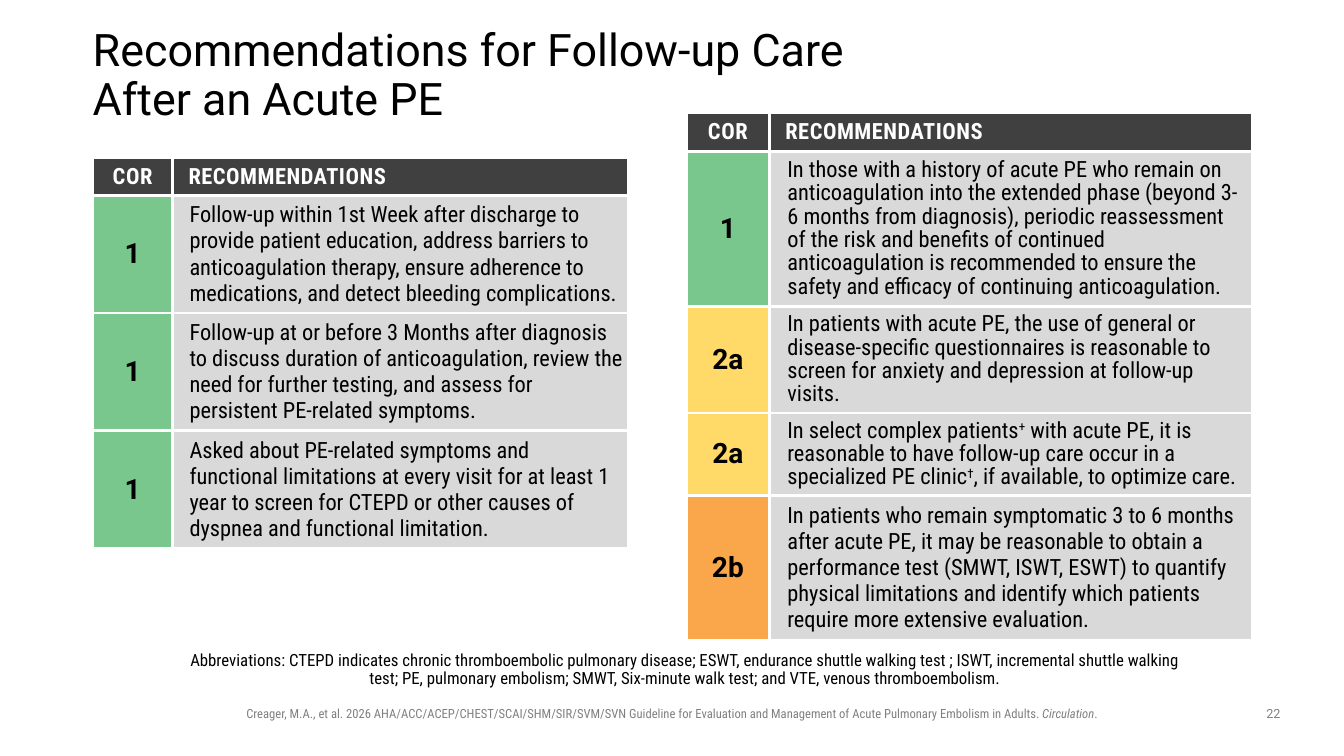
from dataclasses import dataclass

from lxml.etree import fromstring
from pptx import Presentation
from pptx.dml.color import RGBColor
from pptx.enum.text import MSO_ANCHOR as Anchor, PP_ALIGN as Align
from pptx.oxml.ns import nsdecls
from pptx.util import Inches, Pt


@dataclass(frozen=True)
class Theme:
    heading: str = "Roboto"
    body: str = "Roboto Condensed"
    black: str = "000000"
    white: str = "FFFFFF"
    gray: str = "808080"
    header: str = "404040"
    panel: str = "D9D9D9"
    title_size: int = 32
    class_size: int = 20
    text_size: int = 16
    note_size: int = 12
    footer_size: int = 9
    border: float = 2.25


T = Theme()
CLASS_COLORS = {"1": "79C78D", "2a": "FFDA68", "2b": "FAA74B"}

EARLY_VISITS = [
    ("1", 1.13, None, ["Follow-up within 1st Week after discharge to provide patient education, "
                       "address barriers to anticoagulation therapy, ensure adherence to "
                       "medications, and detect bleeding complications."]),
    ("1", 1.13, None, ["Follow-up at or before 3 Months after diagnosis to discuss duration of "
                       "anticoagulation, review the need for further testing, and assess for "
                       "persistent PE-related symptoms."]),
    ("1", 1.13, None, ["Asked about PE-related symptoms and functional limitations at every visit "
                       "for at least 1 year to screen for CTEPD or other causes of dyspnea and "
                       "functional limitation."]),
]
EXTENDED_CARE = [
    ("1", 1.49, 0.9, ["In those with a history of acute PE who remain on anticoagulation into the "
                      "extended phase (beyond 3-6 months from diagnosis), periodic reassessment "
                      "of the risk and benefits of continued anticoagulation is recommended to "
                      "ensure the safety and efficacy of continuing anticoagulation."]),
    ("2a", 1.03, 0.9, ["In patients with acute PE, the use of general or disease-specific "
                       "questionnaires is reasonable to screen for anxiety and depression at "
                       "follow-up visits."]),
    ("2a", 0.8, 0.9, ["In select complex patients", "+",
                      " with acute PE, it is reasonable to have follow-up care occur in a "
                      "specialized PE clinic", "†", ", if available, to optimize care."]),
    ("2b", 1.38, None, ["In patients who remain symptomatic 3 to 6 months after acute PE, it may be "
                        "reasonable to obtain a performance test (SMWT, ISWT, ESWT) to quantify "
                        "physical limitations and identify which patients require more extensive "
                        "evaluation."]),
]
ABBREVIATIONS = (
    "Abbreviations: CTEPD indicates chronic thromboembolic pulmonary disease; ESWT, endurance "
    "shuttle walking test ; ISWT, incremental shuttle walking test; PE, pulmonary embolism; "
    "SMWT, Six-minute walk test; and VTE, venous thromboembolism."
)
CITATION = (
    "Creager, M.A., et al. 2026 AHA/ACC/ACEP/CHEST/SCAI/SHM/SIR/SVM/SVN Guideline for "
    "Evaluation and Management of Acute Pulmonary Embolism in Adults. "
)


def add_run(p, text, size, font, color, bold=False, italic=False, **attrs):
    r = p.add_run()
    r.text = text
    r.font.size = Pt(size)
    r.font.name = font
    r.font.bold = bold
    r.font.italic = italic
    r.font.color.rgb = RGBColor.from_string(color)
    for name, value in attrs.items():
        r._r.get_or_add_rPr().set(name, str(value))


def add_text(slide, box, align=Align.CENTER, anchor=Anchor.TOP, insets=(0.1, 0.05, 0.1, 0.05),
             spacing=None):
    tf = slide.shapes.add_textbox(*map(Inches, box)).text_frame
    tf.word_wrap = True
    tf.vertical_anchor = anchor
    tf.margin_left, tf.margin_top, tf.margin_right, tf.margin_bottom = map(Inches, insets)
    p = tf.paragraphs[0]
    p.alignment = align
    p.line_spacing = spacing
    return p


def style_cell(cell, fill, side_inset, indent=None):
    cell.fill.solid()
    cell.fill.fore_color.rgb = RGBColor.from_string(fill)
    cell.vertical_anchor = Anchor.MIDDLE
    cell.margin_left = cell.margin_right = Inches(side_inset)
    cell.margin_top = cell.margin_bottom = Inches(0.05)
    tc_pr = cell._tc.get_or_add_tcPr()
    for i, side in enumerate("LRTB"):
        tc_pr.insert(i, fromstring(
            f'<a:ln{side} {nsdecls("a")} w="{Pt(T.border)}"><a:solidFill>'
            f'<a:srgbClr val="{T.white}"/></a:solidFill></a:ln{side}>'))
    p = cell.text_frame.paragraphs[0]
    if indent is None:
        p.alignment = Align.CENTER
    else:
        p_pr = p._p.get_or_add_pPr()
        p_pr.set("marL", str(Inches(indent)))
        p_pr.set("indent", "0")
    return p


def add_recommendations(slide, left, top, widths, indent, rows):
    heights = [0.38] + [height for _, height, _, _ in rows]
    frame = slide.shapes.add_table(len(heights), 2, Inches(left), Inches(top),
                                   Inches(sum(widths)), Inches(sum(heights)))
    table = frame.table
    table.horz_banding = False
    for column, width in zip(table.columns, widths):
        column.width = Inches(width)
    for row, height in zip(table.rows, heights):
        row.height = Inches(height)

    for col, (label, pad, spc) in enumerate([("COR", None, 50), ("RECOMMENDATIONS", 0.06, 40)]):
        p = style_cell(table.cell(0, col), T.header, 0.1, pad)
        add_run(p, label, T.text_size, T.body, T.white, bold=True, spc=spc)

    for i, (grade, _, spacing, parts) in enumerate(rows, 1):
        p = style_cell(table.cell(i, 0), CLASS_COLORS[grade], 0.05)
        add_run(p, grade, T.class_size, T.heading, T.black, bold=True)
        p = style_cell(table.cell(i, 1), T.panel, 0.05, indent)
        p.line_spacing = spacing
        for part in parts:
            raised = {"baseline": 30000} if part in ("+", "†") else {}
            add_run(p, part, T.text_size, T.body, T.black, **raised)


def main():
    prs = Presentation()
    prs.slide_width, prs.slide_height = Inches(13.33), Inches(7.5)
    s = prs.slides.add_slide(prs.slide_layouts[6])

    p = add_text(s, (0.92, 0.4, 8.54, 0.72), Align.LEFT, Anchor.MIDDLE, (0, 0, 0, 0), 0.9)
    add_run(p, "Recommendations for Follow-up Care After an Acute PE",
            T.title_size, T.heading, T.black)

    add_recommendations(s, 0.92, 1.56, (0.79, 4.52), 0.12, EARLY_VISITS)
    add_recommendations(s, 6.81, 1.12, (0.82, 4.79), 0.13, EXTENDED_CARE)

    p = add_text(s, (1.88, 6.42, 9.93, 0.46), anchor=Anchor.BOTTOM,
                 insets=(0, 0.05, 0.1, 0.05), spacing=0.9)
    add_run(p, ABBREVIATIONS, T.note_size, T.body, T.black)

    p = add_text(s, (2.23, 6.95, 8.87, 0.25))
    for text, italic in [(CITATION, False), ("Circulation", True), (".", False)]:
        add_run(p, text, T.footer_size, T.body, T.gray, italic=italic)

    p = add_text(s, (12.42, 6.95, 0.42, 0.26))
    add_run(p, "22", T.footer_size, T.heading, T.gray)

    prs.save("out.pptx")


if __name__ == "__main__":
    main()
